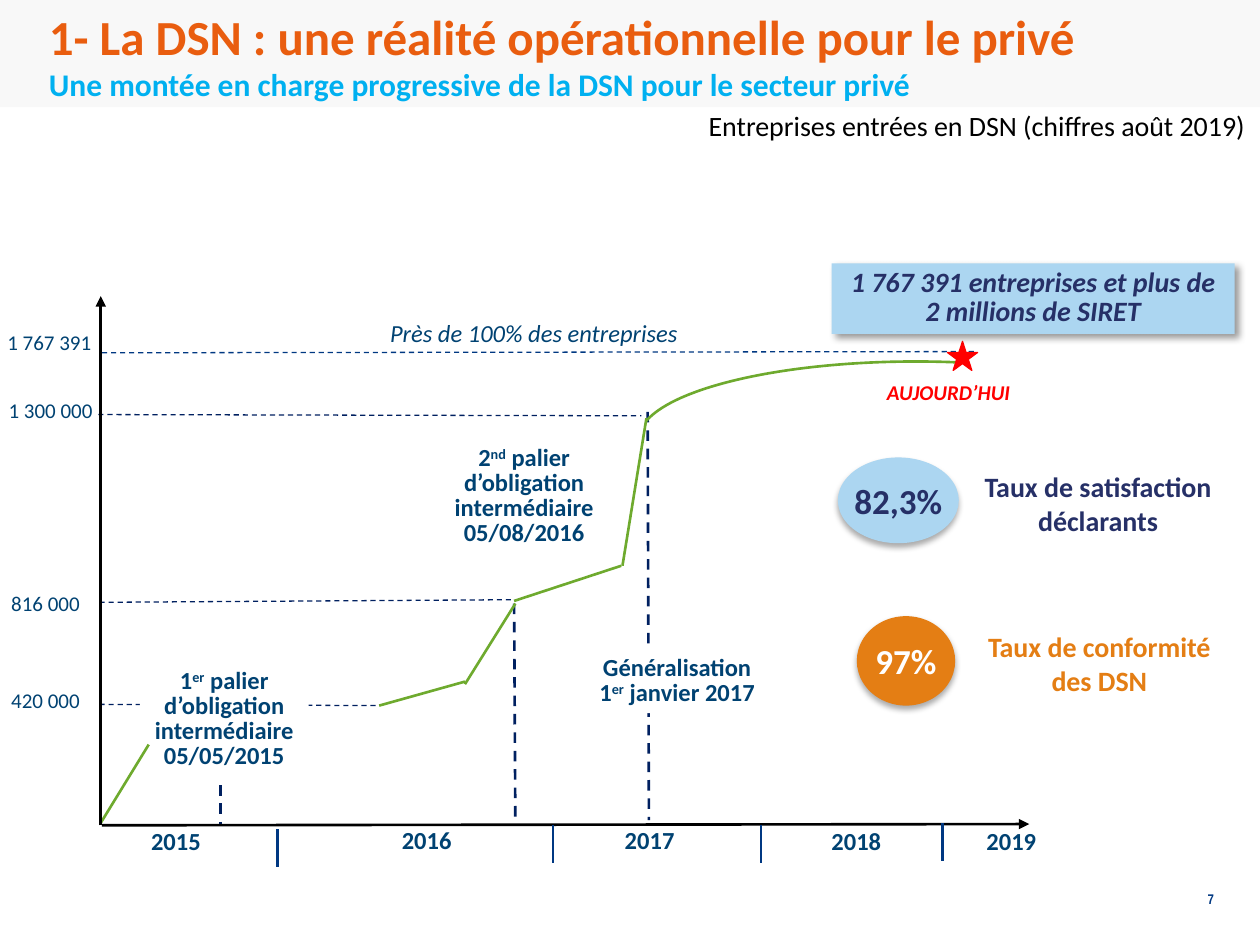
from lxml import etree
from pptx import Presentation
from pptx import util as u
from pptx.dml.color import RGBColor
from pptx.enum import dml, shapes, text
from pptx.oxml import ns

NAVY, BLUE, TEAL, INDIGO = "002060", "003882", "004272", "263067"
GREEN, ORANGE, SKY, RED = "6EAA2E", "E47E14", "ACD6F1", "FF0000"
LEFT, CENTER, RIGHT = text.PP_ALIGN.LEFT, text.PP_ALIGN.CENTER, text.PP_ALIGN.RIGHT
FORM = shapes.MSO_SHAPE


def rgb(value):
    return RGBColor.from_string(value)


def child(parent, tag, **attributes):
    return etree.SubElement(parent, ns.qn(tag), attributes)


class Slide:
    """Draws styled elements on the current slide, with lengths in points."""

    font = "Calibri"

    def __init__(self, deck):
        self.page = deck.slides.add_slide(deck.slide_layouts[6])

    def line(self, start, end, color, width=1.5, dashed=False, arrow=False):
        ends = [u.Pt(value) for value in (*start, *end)]
        line = self.page.shapes.add_connector(shapes.MSO_CONNECTOR.STRAIGHT, *ends)
        line.line.color.rgb = rgb(color)
        line.line.width = u.Pt(width)
        if dashed:
            line.line.dash_style = dml.MSO_LINE.DASH
        if arrow:
            child(line.line._get_or_add_ln(), "a:tailEnd", type="triangle")
        child(line._element.spPr, "a:effectLst")

    def shape(self, form, place, fill=None, outline=None, width=0.75):
        shape = self.page.shapes.add_shape(form, *map(u.Pt, place))
        shape.shadow.inherit = False
        if fill:
            shape.fill.solid()
            shape.fill.fore_color.rgb = rgb(fill)
        else:
            shape.fill.background()
        if outline:
            shape.line.color.rgb = rgb(outline)
            shape.line.width = u.Pt(width)
        else:
            shape.line.fill.background()
        return shape

    def shadow(self, shape, blur, distance, angle, alpha):
        effects = shape._element.spPr.find(ns.qn("a:effectLst"))
        outer = child(effects, "a:outerShdw", blurRad=str(u.Pt(blur)),
                      dist=str(u.Pt(distance)), dir=str(angle * 60000), rotWithShape="0")
        color = child(outer, "a:srgbClr", val="000000")
        child(color, "a:alpha", val=str(alpha * 1000))

    def arc(self, place, start, end, color):
        arc = self.shape(FORM.ARC, place, outline=color, width=1.5)
        arc.adjustments[0], arc.adjustments[1] = start, end
        arc._element.spPr.xfrm.set("flipH", "1")

    def fill_text(self, box, content, size, color, align=LEFT, bold=False, italic=False,
                  spacing=0.85, font=None, wrap=True):
        """Fill a box; in a list of parts, every second one is superscript."""
        frame = box.text_frame
        frame.word_wrap = wrap
        para = frame.paragraphs[0]
        para.alignment, para.line_spacing = align, spacing
        for index, part in enumerate([content] if isinstance(content, str) else content):
            span = para.add_run()
            span.text = part
            if index % 2:
                span._r.get_or_add_rPr().set("baseline", "30000")
        self.style(para.font, size, color, bold, italic, font)
        return para

    def style(self, target, size, color, bold=False, italic=False, font=None):
        target.name, target.size = font or self.font, u.Pt(size)
        target.bold, target.italic = bold, italic
        target.color.rgb = rgb(color)

    def label(self, place, *content, **style):
        box = self.page.shapes.add_textbox(*map(u.Pt, place))
        return self.fill_text(box, *content, **style)

    def panel(self, place, fill, *content, **style):
        box = self.shape(FORM.RECTANGLE, place, fill)
        box.text_frame.vertical_anchor = text.MSO_ANCHOR.MIDDLE
        self.fill_text(box, *content, align=CENTER, bold=True, **style)
        return box

    def rate(self, place, fill, value, color, caption_place, caption, caption_color):
        oval = self.shape(FORM.OVAL, place, fill)
        self.shadow(oval, 3.5, 2.2, 90, 32)
        oval.text_frame.vertical_anchor = text.MSO_ANCHOR.MIDDLE
        self.fill_text(oval, value, 20, color, align=CENTER, bold=True, spacing=1.0,
                       wrap=False)
        self.label(caption_place, caption, 16, caption_color,
                   align=CENTER, bold=True, spacing=1.0)

    def title(self, place, heading, subtitle):
        para = self.label(place, heading, 28, "E95D0F", bold=True, spacing=1.0)
        para.add_line_break()
        span = para.add_run()
        span.text = subtitle
        self.style(span.font, 18, "00B0F0", bold=True)


def main():
    deck = Presentation()
    deck.slide_width, deck.slide_height = u.Pt(720), u.Pt(540)
    slide = Slide(deck)

    slide.shape(FORM.RECTANGLE, (0, 0, 720, 61.2), "F8F8F8")
    slide.title((20.9, 0, 633.6, 51.1),
                "1- La DSN : une réalité opérationnelle pour le privé",
                "Une montée en charge progressive de la DSN pour le secteur privé")
    slide.label((375.8, 58.3, 365, 26.6), "Entreprises entrées en DSN (chiffres août 2019)",
                16, "000000", align=CENTER, spacing=1.0)
    slide.label((533, 505.4, 167.8, 28.8), "7", 8, BLUE, align=RIGHT, bold=True,
                spacing=1.0, font="Arial Narrow")

    levels = [
        ("420 000", (-0.7, 391.7), (56.9, 402.5), (217.4, 403.2), NAVY),
        ("816 000", (-0.7, 336.2), (56.9, 344.2), (294.5, 342.7), NAVY),
        ("1 300 000", (-2.2, 226.1), (56.2, 236.9), (366.5, 237.6), NAVY),
        ("1 767 391", (-2.9, 187.2), (58.3, 201.6), (558.7, 200.9), BLUE),
    ]
    for value, corner, start, end, color in levels:
        slide.line(start, end, color, 0.75, dashed=True)
        slide.label((*corner, 70.6, 19.4), value, 12, TEAL)

    for start, end in [((293.8, 344.9), (294.5, 471.6)), ((370.1, 235.4), (370.8, 468.7)),
                       ((126, 448.6), (126, 470.9))]:
        slide.line(start, end, NAVY, dashed=True)

    milestones = [
        ((79.9, 378.7, 96.5, 64.8), "FFFFFF",
         ["1", "er", " palier d’obligation intermédiaire 05/05/2015"]),
        ((251.3, 251.3, 96.5, 64.8), None,
         ["2", "nd", " palier d’obligation intermédiaire 05/08/2016"]),
        ((329, 371.5, 115.9, 36), "FFFFFF", ["Généralisation 1", "er", " janvier 2017"]),
    ]
    for place, fill, parts in milestones:
        slide.panel(place, fill, parts, 14, TEAL)

    growth = [((57.6, 470.2), (85, 425.5)), ((216.7, 403.2), (265.7, 389.5)),
              ((265.7, 391), (294.5, 344.9)), ((293.8, 343.4), (355, 323.3)),
              ((355.7, 323.3), (369.4, 239))]
    for start, end in growth:
        slide.line(start, end, GREEN)
    slide.arc((365, 206.6, 316.8, 88.6), 143.58, 213.66, GREEN)

    for start, end in [((58.3, 471.6), (588.2, 470.9)), ((57.6, 471.6), (57.6, 169.2))]:
        slide.line(start, end, "000000", arrow=True)
    for x, y in [(158.4, 473.8), (316.1, 471.6), (434.9, 471.6), (538.6, 470.2)]:
        slide.line((x, y), (x, y + 21.8), BLUE)
    years = [(79.2, 470.9), (222.5, 470.2), (349.9, 470.2), (468, 470.9), (556.6, 470.9)]
    for year, corner in enumerate(years, 2015):
        slide.label((*corner, 63.4, 21.6), str(year), 14, TEAL, bold=True)

    slide.label((213.1, 180.7, 181.4, 21.6), "Près de 100% des entreprises", 14, TEAL,
                align=RIGHT, italic=True)
    slide.shape(FORM.STAR_5_POINT, (541.4, 195.1, 17.3, 16.6), RED, RED)
    slide.label((499.7, 215.3, 116.6, 19.4), "AUJOURD’HUI", 12, RED, bold=True, italic=True)
    callout = slide.panel((475.2, 150.5, 230.4, 40.3), SKY,
                          "1 767 391 entreprises et plus de 2 millions de SIRET",
                          16, INDIGO, italic=True)
    slide.shadow(callout, 4, 3, 45, 40)

    slide.rate((478.8, 261.4, 69.1, 49), SKY, "82,3%", INDIGO,
               (550.8, 265, 153.4, 46.1), "Taux de satisfaction déclarants", INDIGO)
    slide.rate((489.6, 352.1, 56.2, 51.1), ORANGE, "97%", "FFFFFF",
               (550.8, 356.4, 154.8, 46.1), "Taux de conformité des DSN", ORANGE)
    deck.save("out.pptx")


if __name__ == "__main__":
    main()
